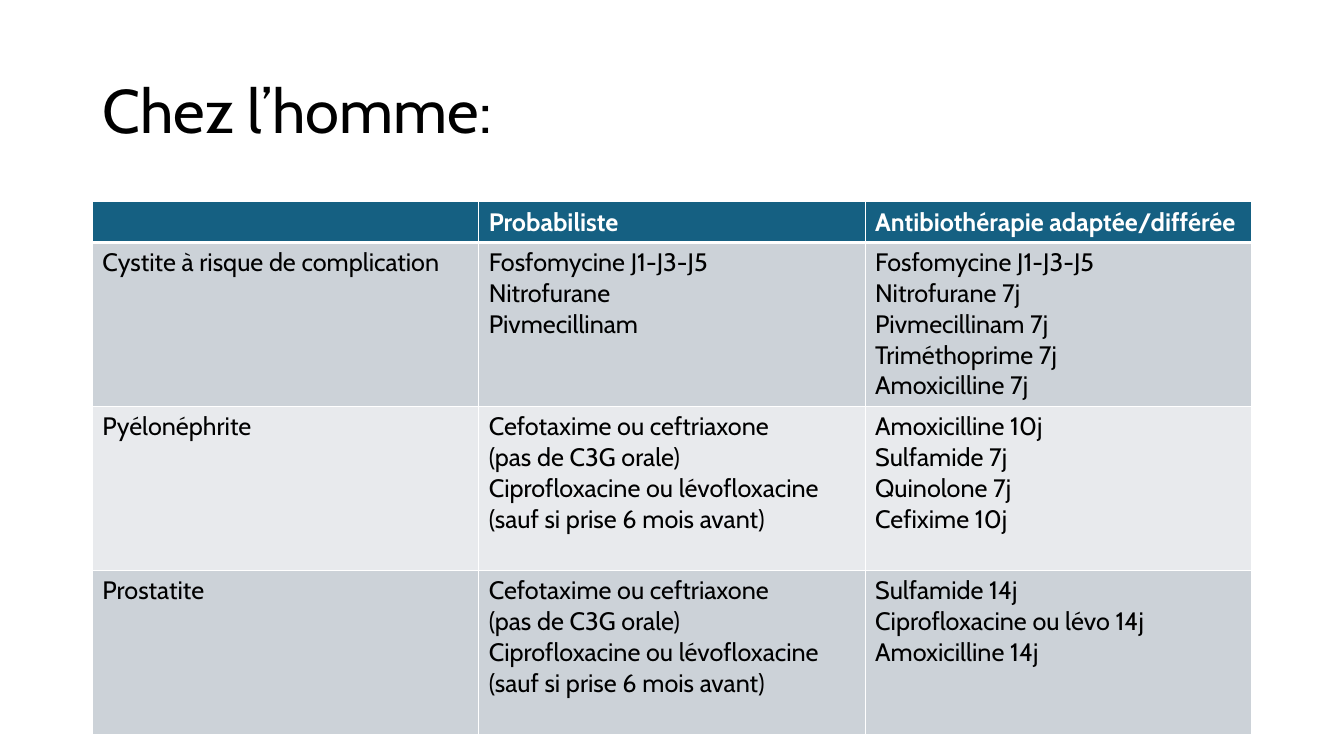
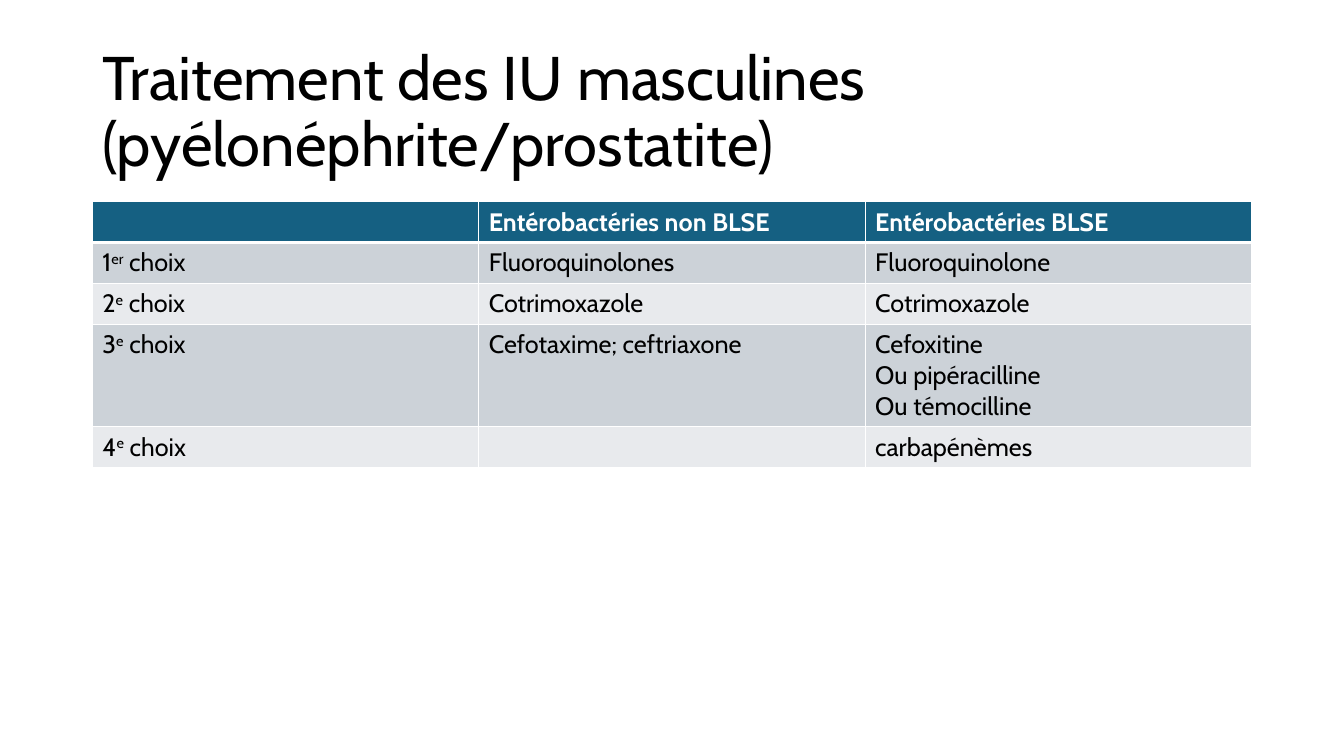
from lxml import etree
from pptx import Presentation
from pptx.dml.color import RGBColor
from pptx.enum import text
from pptx.oxml import ns
from pptx.util import Pt

BLACK = RGBColor(0x00, 0x00, 0x00)
WHITE = RGBColor(0xFF, 0xFF, 0xFF)
HEADER = RGBColor(0x15, 0x60, 0x82)
BANDS = (RGBColor(0xCC, 0xD2, 0xD8), RGBColor(0xE8, 0xEA, 0xED))

INJECTABLE_THEN_ORAL = (
    "Cefotaxime ou ceftriaxone\n(pas de C3G orale)\n"
    "Ciprofloxacine ou lévofloxacine\n(sauf si prise 6 mois avant)"
)


class Deck:
    font = "Cabin"
    left, width = 66, 828
    title_top, title_height, title_size = 28.8, 104.4, 44
    table_top, text_size = 144, 18
    line_height, cell_padding = 22, 7.2

    def __init__(self):
        self.deck = Presentation()
        self.deck.slide_width, self.deck.slide_height = Pt(960), Pt(540)
        self.page = None

    def add_page(self, title):
        self.page = self.deck.slides.add_slide(self.deck.slide_layouts[6])
        self.add_title(title)

    def style(self, para, size, color, bold=False):
        for span in para.runs:
            span.font.name = self.font
            span.font.size = Pt(size)
            span.font.bold = bold
            span.font.color.rgb = color

    def add_title(self, title):
        box = self.page.shapes.add_textbox(
            Pt(self.left), Pt(self.title_top), Pt(self.width), Pt(self.title_height)
        )
        frame = box.text_frame
        frame.word_wrap = True
        frame.vertical_anchor = text.MSO_ANCHOR.MIDDLE
        frame.text = title
        para = frame.paragraphs[0]
        para.line_spacing = 0.9
        self.style(para, self.title_size, BLACK)

    def height_for(self, lines):
        return Pt(lines * self.line_height + self.cell_padding)

    def add_table(self, rows, line_counts):
        columns = len(rows[0])
        heights = [self.height_for(lines) for lines in line_counts]
        table = self.page.shapes.add_table(
            len(rows), columns, Pt(self.left), Pt(self.table_top), Pt(self.width), sum(heights)
        ).table
        for column in table.columns:
            column.width = Pt(self.width / columns)
        for index, (values, height) in enumerate(zip(rows, heights)):
            table.rows[index].height = height
            for position, value in enumerate(values):
                self.fill_cell(table.cell(index, position), value, index)

    def fill_cell(self, cell, value, row):
        is_header = row == 0
        self.add_borders(cell, top=3 if row == 1 else 1, bottom=3 if is_header else 1)
        cell.fill.solid()
        cell.fill.fore_color.rgb = HEADER if is_header else BANDS[(row - 1) % 2]
        if isinstance(value, tuple):
            para = cell.text_frame.paragraphs[0]
            for part in value:
                para.add_run().text = part
            para.runs[1]._r.get_or_add_rPr().set("baseline", "30000")
        else:
            cell.text_frame.text = value
        for para in cell.text_frame.paragraphs:
            self.style(para, self.text_size, WHITE if is_header else BLACK, is_header)

    def add_borders(self, cell, top, bottom):
        properties = cell._tc.get_or_add_tcPr()
        for side, weight in (("L", 1), ("R", 1), ("T", top), ("B", bottom)):
            line = etree.SubElement(properties, ns.qn(f"a:ln{side}"), w=str(Pt(weight)))
            fill = etree.SubElement(line, ns.qn("a:solidFill"))
            etree.SubElement(fill, ns.qn("a:srgbClr"), val=str(WHITE))


def main():
    slides = Deck()

    slides.add_page("Chez l’homme:")
    slides.add_table(
        [
            ("", "Probabiliste", "Antibiothérapie adaptée/différée"),
            (
                "Cystite à risque de complication",
                "Fosfomycine J1-J3-J5\nNitrofurane\nPivmecillinam",
                "Fosfomycine J1-J3-J5\nNitrofurane 7j\nPivmecillinam 7j\n"
                "Triméthoprime 7j\nAmoxicilline 7j",
            ),
            (
                "Pyélonéphrite",
                INJECTABLE_THEN_ORAL,
                "Amoxicilline 10j\nSulfamide 7j\nQuinolone 7j\nCefixime 10j",
            ),
            (
                "Prostatite",
                INJECTABLE_THEN_ORAL,
                "Sulfamide 14j\nCiprofloxacine ou lévo 14j\nAmoxicilline 14j",
            ),
        ],
        line_counts=(1, 5, 5, 5),
    )

    slides.add_page("Traitement des IU masculines (pyélonéphrite/prostatite)")
    slides.add_table(
        [
            ("", "Entérobactéries non BLSE", "Entérobactéries BLSE"),
            (("1", "er", " choix"), "Fluoroquinolones", "Fluoroquinolone"),
            (("2", "e", " choix"), "Cotrimoxazole", "Cotrimoxazole"),
            (
                ("3", "e", " choix"),
                "Cefotaxime; ceftriaxone",
                "Cefoxitine\nOu pipéracilline\nOu témocilline",
            ),
            (("4", "e", " choix"), "", "carbapénèmes"),
        ],
        line_counts=(1, 1, 1, 3, 1),
    )

    slides.deck.save("out.pptx")


if __name__ == "__main__":
    main()
